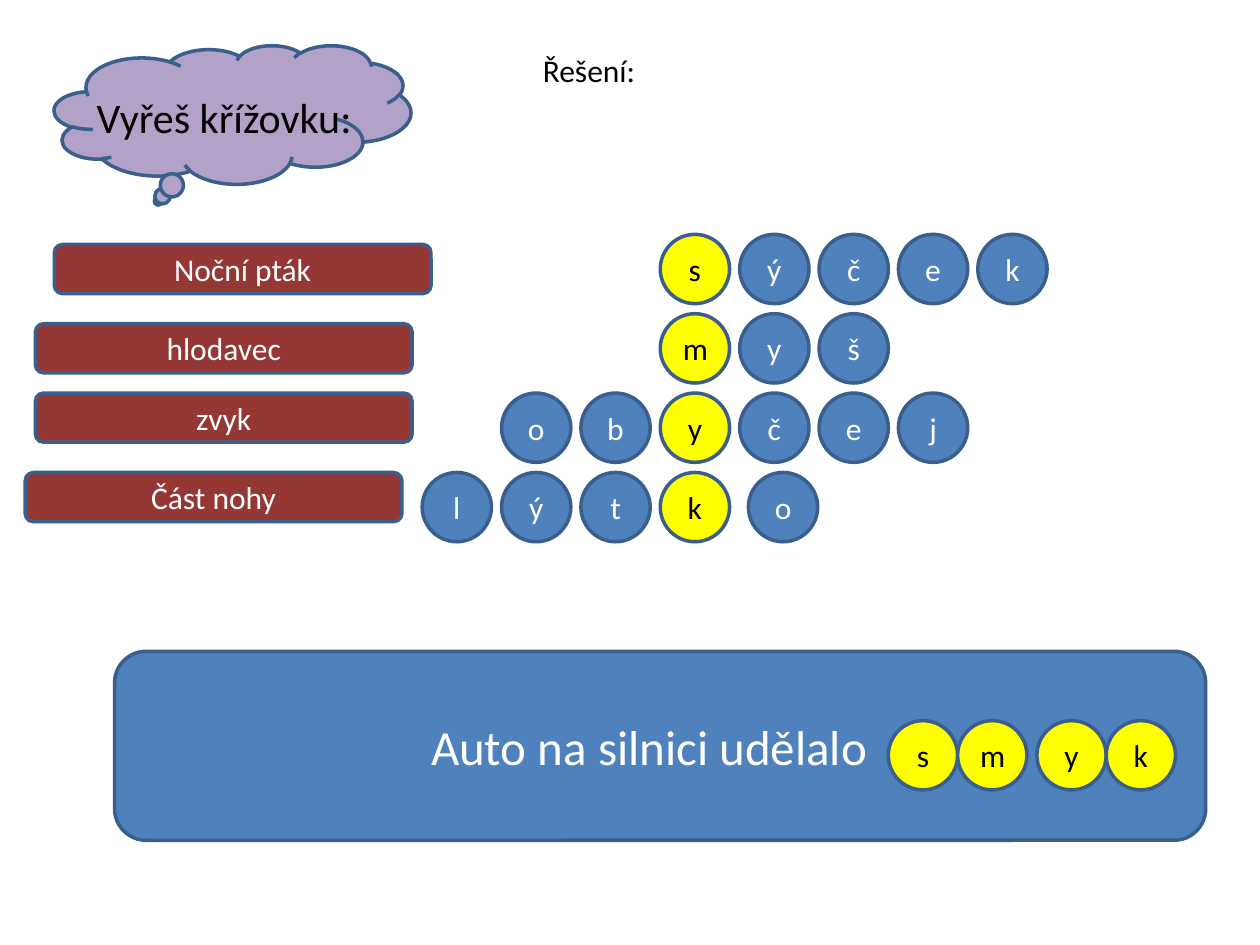
from pptx import Presentation
from pptx.dml.color import RGBColor
from pptx.enum.shapes import MSO_SHAPE
from pptx.enum.text import MSO_ANCHOR, PP_ALIGN
from pptx.util import Pt

CIRCLE = MSO_SHAPE.FLOWCHART_CONNECTOR
ROUNDED = MSO_SHAPE.ROUNDED_RECTANGLE
CLOUD = MSO_SHAPE.CLOUD_CALLOUT
MIDDLE = MSO_ANCHOR.MIDDLE
CENTER = PP_ALIGN.CENTER

BLUE = RGBColor(0x4F, 0x81, 0xBD)
OUTLINE = RGBColor(0x3A, 0x5F, 0x8C)
YELLOW = RGBColor(0xFF, 0xFF, 0x00)
RED = RGBColor(0x95, 0x37, 0x35)
LILAC = RGBColor(0xB3, 0xA2, 0xC7)
BLACK = RGBColor(0, 0, 0)
WHITE = RGBColor(0xFF, 0xFF, 0xFF)

DIAMETER = 39.6
PITCH = 45.36

# Clue, clue left, clue top, answer, index of the key letter
CLUES = [
    ("Noční pták", 31, 139.7, "sýček", 0),
    ("hlodavec", 20.2, 185, "myš", 0),
    ("zvyk", 20.2, 224.6, "obyčej", 2),
    ("Část nohy", 14.4, 270, "lýtko", 3),
]


def add_run(para, text, size, color):
    span = para.add_run()
    span.text = text
    span.font.name = "Calibri"
    span.font.size = Pt(size)
    span.font.color.rgb = color


def add_panel(page, kind, box, fill, text="", size=18, color=WHITE):
    panel = page.shapes.add_shape(kind, *map(Pt, box))
    panel.shadow.inherit = False
    panel.fill.solid()
    panel.fill.fore_color.rgb = fill
    panel.line.color.rgb = OUTLINE
    panel.line.width = Pt(2)
    if text:
        panel.text_frame.word_wrap = True
        panel.text_frame.vertical_anchor = MIDDLE
        para = panel.text_frame.paragraphs[0]
        para.alignment = CENTER
        add_run(para, text, size, color)
    return panel


def add_label(page, box, text, size):
    label = page.shapes.add_textbox(*map(Pt, box))
    label.text_frame.word_wrap = True
    add_run(label.text_frame.paragraphs[0], text, size, BLACK)


def add_letter(page, left, top, letter, is_key):
    fill, color = (YELLOW, BLACK) if is_key else (BLUE, WHITE)
    box = (left, top, DIAMETER, DIAMETER)
    add_panel(page, CIRCLE, box, fill, letter, color=color)


def add_heading(page, left, top):
    add_panel(page, CLOUD, (left, top, 203.8, 79.2), LILAC)
    add_label(page, (left + 17.2, top + 23, 442, 36), "Vyřeš křížovku:", 24)
    add_label(page, (left + 272.1, top, 113, 28.8), "Řešení:", 18)


def add_crossword(page, key_left, top):
    for row, (clue, clue_left, clue_top, answer, key) in enumerate(CLUES):
        add_panel(page, ROUNDED, (clue_left, clue_top, 215.3, 28.1), RED, clue)
        for column, letter in enumerate(answer):
            left = key_left + (column - key) * PITCH
            # The last letter of the last answer stands slightly apart
            if row == len(CLUES) - 1 and column > key:
                left += 5
            add_letter(page, left, top + row * PITCH, letter, column == key)


def add_solution(page, left, top, width, height):
    banner = add_panel(page, ROUNDED, (left, top, width, height), BLUE,
                       "Auto na silnici udělalo", 28)
    banner.text_frame.margin_right = Pt(19.8)
    # Two touching pairs of letters
    for index, (_, _, _, answer, key) in enumerate(CLUES):
        letter_left = left + 442.1 + index * DIAMETER + index // 2 * 5.7
        add_letter(page, letter_left, top + 39.6, answer[key], True)


def main():
    deck = Presentation()
    deck.slide_width, deck.slide_height = Pt(720), Pt(540)
    page = deck.slides.add_slide(deck.slide_layouts[6])
    add_heading(page, 31, 25.9)
    add_crossword(page, 377.3, 133.9)
    add_solution(page, 65.5, 372.2, 623.5, 108)
    deck.save("out.pptx")


if __name__ == "__main__":
    main()
